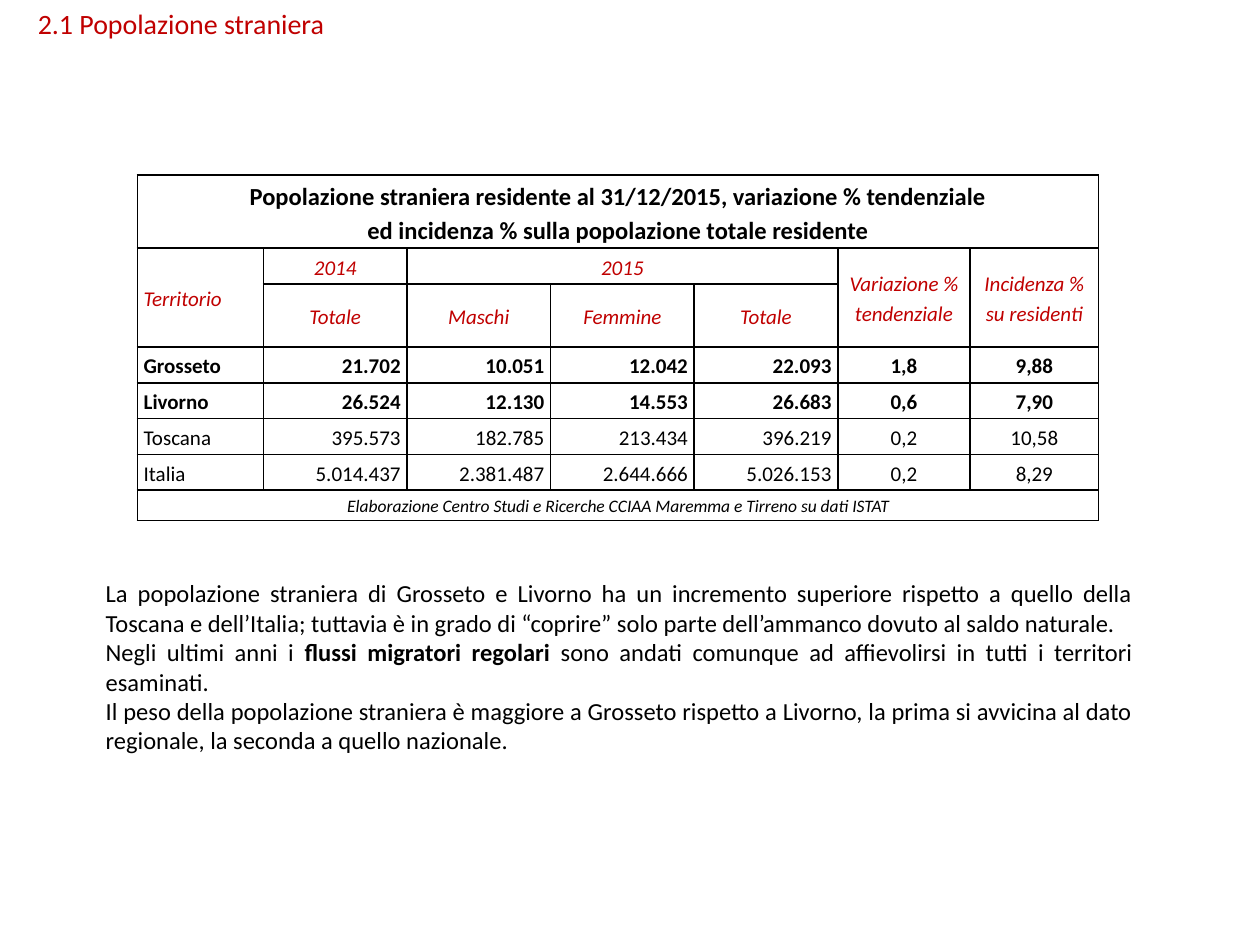
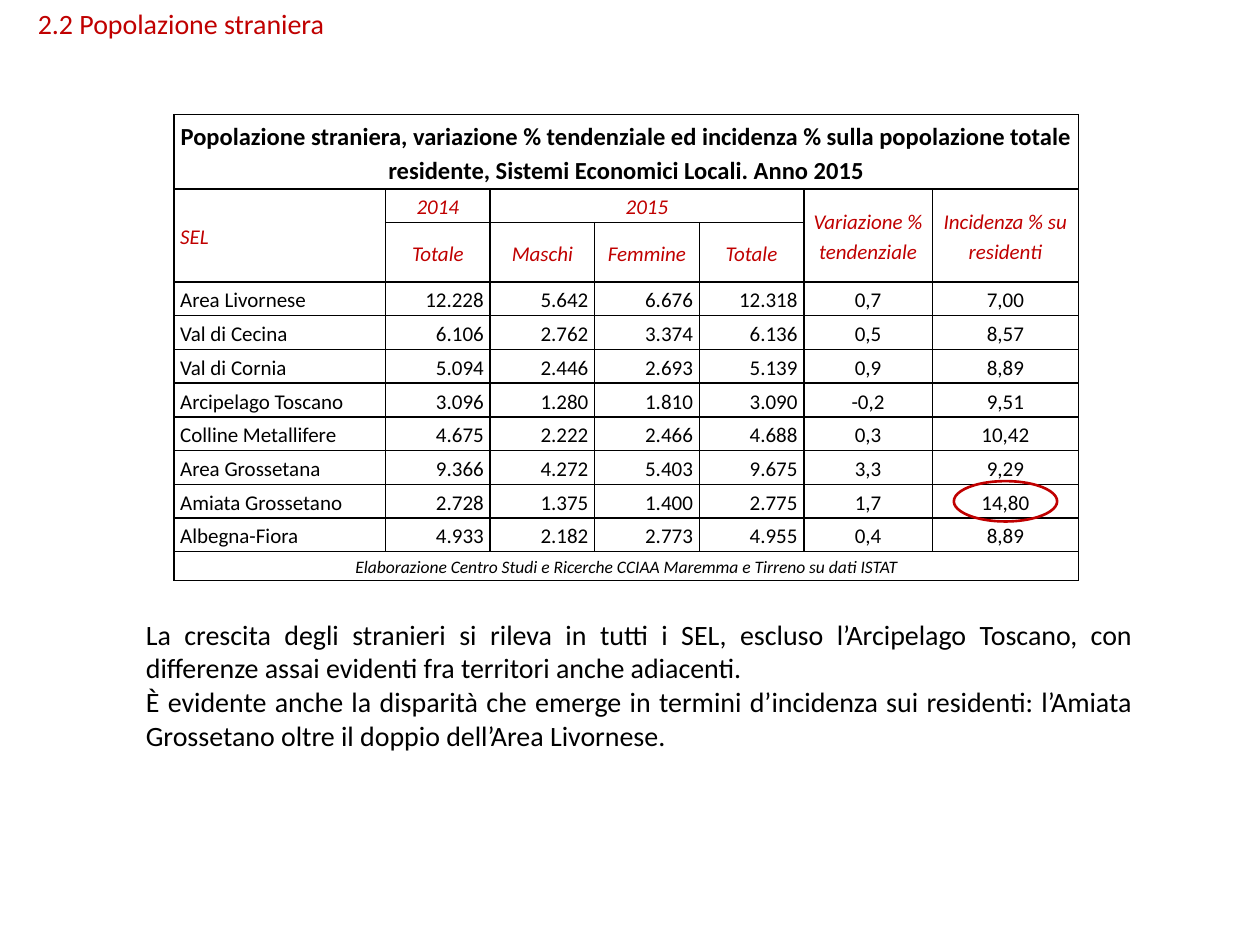
from collections import namedtuple

from lxml import etree
from pptx import Presentation
from pptx.dml.color import RGBColor
from pptx.enum.shapes import MSO_SHAPE as Shape
from pptx.enum.text import MSO_ANCHOR as Anchor, MSO_AUTO_SIZE as AutoSize, PP_ALIGN as Align
from pptx.oxml.ns import qn
from pptx.util import Inches, Pt

Box = namedtuple("Box", "left top width height")

RED = RGBColor(0xC0, 0x00, 0x00)
BLACK = RGBColor(0x00, 0x00, 0x00)
FONT = "Calibri"
TITLE_BOX = Box(0.2, 0, 7.72, 0.37)
CAPTION = {"size": Pt(14), "bold": True}
HEADING = {"size": Pt(12), "italic": True, "color": RED}
VALUE = {"size": Pt(12)}
SOURCE = {"size": Pt(10), "italic": True}
SOURCE_TEXT = "Elaborazione Centro Studi e Ricerche CCIAA Maremma e Tirreno su dati ISTAT"
BODY_ALIGN = [Align.LEFT] + [Align.RIGHT] * 4 + [Align.CENTER] * 2
FIRST_BODY_ROW = 3

FOREIGN_BY_TERRITORY = {
    "box": Box(1.09, 1.39, 7.64, 2.74),
    "columns": [1, 1.14, 1.14, 1.14, 1.14, 1.05, 1.02],
    "caption": ["Popolazione straniera residente al 31/12/2015, variazione % tendenziale",
                "ed incidenza % sulla popolazione totale residente"],
    "caption_height": 0.58, "subheading_height": 0.5, "source_height": 0.24,
    "area": "Territorio",
    "bold_areas": {"Grosseto", "Livorno"},
    "body": [
        ["Grosseto", "21.702", "10.051", "12.042", "22.093", "1,8", "9,88"],
        ["Livorno", "26.524", "12.130", "14.553", "26.683", "0,6", "7,90"],
        ["Toscana", "395.573", "182.785", "213.434", "396.219", "0,2", "10,58"],
        ["Italia", "5.014.437", "2.381.487", "2.644.666", "5.026.153", "0,2", "8,29"],
    ],
}
FOREIGN_BY_SEL = {
    "box": Box(1.38, 0.91, 7.17, 3.7),
    "columns": [1.68, 0.83, 0.83, 0.83, 0.83, 1.02, 1.16],
    "caption": ["Popolazione straniera, variazione % tendenziale ed incidenza % sulla popolazione "
                "totale residente, Sistemi Economici Locali. Anno 2015"],
    "caption_height": 0.59, "subheading_height": 0.47, "source_height": 0.23,
    "area": "SEL",
    "bold_areas": set(),
    "body": [
        ["Area Livornese", "12.228", "5.642", "6.676", "12.318", "0,7", "7,00"],
        ["Val di Cecina", "6.106", "2.762", "3.374", "6.136", "0,5", "8,57"],
        ["Val di Cornia", "5.094", "2.446", "2.693", "5.139", "0,9", "8,89"],
        ["Arcipelago Toscano", "3.096", "1.280", "1.810", "3.090", "-0,2", "9,51"],
        ["Colline Metallifere", "4.675", "2.222", "2.466", "4.688", "0,3", "10,42"],
        ["Area Grossetana", "9.366", "4.272", "5.403", "9.675", "3,3", "9,29"],
        ["Amiata Grossetano", "2.728", "1.375", "1.400", "2.775", "1,7", "14,80"],
        ["Albegna-Fiora", "4.933", "2.182", "2.773", "4.955", "0,4", "8,89"],
    ],
}
TERRITORY_COMMENT = [
    [("La popolazione straniera di Grosseto e Livorno ha un incremento superiore rispetto a quello "
      "della Toscana e dell’Italia; tuttavia è in grado di “coprire” solo parte dell’ammanco dovuto "
      "al saldo naturale.", False)],
    [("Negli ultimi anni i ", False), ("flussi migratori regolari ", True),
     ("sono andati comunque ad affievolirsi in tutti i territori esaminati.", False)],
    [("Il peso della popolazione straniera è maggiore a Grosseto rispetto a Livorno, la prima si "
      "avvicina al dato regionale, la seconda a quello nazionale.", False)],
]
SEL_COMMENT = [
    [("La crescita degli stranieri si rileva in tutti i SEL, escluso l’Arcipelago Toscano, con "
      "differenze assai evidenti fra territori anche adiacenti.", False)],
    [("È evidente anche la disparità che emerge in termini d’incidenza sui residenti: l’Amiata "
      "Grossetano oltre il doppio dell’Area Livornese.", False)],
]


def inches(box):
    return [Inches(length) for length in box]


def set_font(font, style):
    formats = {"name": FONT, "bold": False, "italic": False, "color": BLACK, **style}
    font.color.rgb = formats.pop("color")
    for name, value in formats.items():
        setattr(font, name, value)


def add_title(page, text):
    title = page.shapes.title
    title.left, title.top, title.width, title.height = inches(TITLE_BOX)
    frame = title.text_frame
    frame.text = text
    frame.auto_size = AutoSize.NONE
    frame.vertical_anchor = Anchor.TOP
    para = frame.paragraphs[0]
    para.alignment = Align.LEFT
    set_font(para.runs[0].font, {"size": Pt(16), "color": RED})


def add_comment(page, box, paragraphs, size):
    frame = page.shapes.add_textbox(*inches(box)).text_frame
    frame.word_wrap = True
    for index, spans in enumerate(paragraphs):
        para = frame.add_paragraph() if index else frame.paragraphs[0]
        para.alignment = Align.JUSTIFY
        for text, bold in spans:
            span = para.add_run()
            span.text = text
            set_font(span.font, {"size": Pt(size), "bold": bold})


def add_borders(cell):
    properties = cell._tc.get_or_add_tcPr()
    for side in ("a:lnL", "a:lnR", "a:lnT", "a:lnB"):
        line = etree.SubElement(properties, qn(side), w=str(Pt(1)))
        fill = etree.SubElement(line, qn("a:solidFill"))
        etree.SubElement(fill, qn("a:srgbClr"), val=str(BLACK))


def write_cell(cell, lines, style, alignment=Align.CENTER):
    cell.text = "\n".join(lines)
    for para in cell.text_frame.paragraphs:
        para.alignment = alignment
        para.line_spacing = 1.15
        set_font(para.runs[0].font, style)


def write_headings(table, area):
    headings = [(1, 0, area, 2, 1), (1, 1, "2014", 1, 1), (1, 2, "2015", 1, 3),
                (1, 5, "Variazione % tendenziale", 2, 1),
                (1, 6, "Incidenza % su residenti", 2, 1)]
    subheadings = ["Totale", "Maschi", "Femmine", "Totale"]
    headings += [(2, column, text, 1, 1) for column, text in enumerate(subheadings, 1)]
    for row, column, text, height, width in headings:
        cell = table.cell(row, column)
        if height * width > 1:
            cell.merge(table.cell(row + height - 1, column + width - 1))
        write_cell(cell, [text], HEADING, Align.CENTER if column else Align.LEFT)


def add_population_table(page, data):
    box, body = data["box"], data["body"]
    row_count = len(body) + FIRST_BODY_ROW + 1
    last_row, last_column = row_count - 1, len(data["columns"]) - 1
    special = {0: data["caption_height"], 2: data["subheading_height"],
               last_row: data["source_height"]}
    plain_height = (box.height - sum(special.values())) / (row_count - len(special))

    table = page.shapes.add_table(row_count, last_column + 1, *inches(box)).table
    table.first_row = table.horz_banding = False
    for column, width in zip(table.columns, data["columns"]):
        column.width = Inches(width)
    for index, row in enumerate(table.rows):
        row.height = Inches(special.get(index, plain_height))
    for cell in table.iter_cells():
        add_borders(cell)
        cell.fill.background()
        cell.vertical_anchor = Anchor.MIDDLE
        cell.margin_left = cell.margin_right = Inches(0.05)
        cell.margin_top = cell.margin_bottom = 0

    for row, lines, style in ((0, data["caption"], CAPTION), (last_row, [SOURCE_TEXT], SOURCE)):
        table.cell(row, 0).merge(table.cell(row, last_column))
        write_cell(table.cell(row, 0), lines, style)
    write_headings(table, data["area"])
    for row, values in enumerate(body, FIRST_BODY_ROW):
        style = {**VALUE, "bold": values[0] in data["bold_areas"]}
        for column, (text, alignment) in enumerate(zip(values, BODY_ALIGN)):
            write_cell(table.cell(row, column), [text], style, alignment)
    return table


def circle_incidence(page, box, table, area):
    row = next(index for index, cells in enumerate(table.rows) if cells.cells[0].text == area)
    heights = [item.height for item in table.rows]
    widths = [item.width for item in table.columns]
    width, height = Inches(0.82), Inches(0.32)
    center_x = Inches(box.left) + sum(widths) - widths[-1] // 2
    center_y = Inches(box.top) + sum(heights[:row]) + heights[row] // 2
    ring = page.shapes.add_shape(Shape.OVAL, center_x - width // 2, center_y - height // 2,
                                 width, height)
    ring.shadow.inherit = False
    ring.fill.background()
    ring.line.color.rgb = RED
    ring.line.width = Pt(1.5)


def add_population_page(deck, title, data, comment_box, comment, size):
    page = deck.slides.add_slide(deck.slide_layouts.get_by_name("Title Only"))
    add_comment(page, comment_box, comment, size)
    table = add_population_table(page, data)
    add_title(page, title)
    return page, table


def main():
    deck = Presentation()
    deck.slide_width, deck.slide_height = Inches(10), Inches(7.5)
    add_population_page(deck, "2.1 Popolazione straniera", FOREIGN_BY_TERRITORY,
                        Box(0.74, 4.54, 8.35, 1.52), TERRITORY_COMMENT, 14)
    page, table = add_population_page(deck, "2.2 Popolazione straniera", FOREIGN_BY_SEL,
                                      Box(1.06, 4.85, 8.03, 1.18), SEL_COMMENT, 16)
    circle_incidence(page, FOREIGN_BY_SEL["box"], table, "Amiata Grossetano")
    deck.save("out.pptx")


if __name__ == "__main__":
    main()
